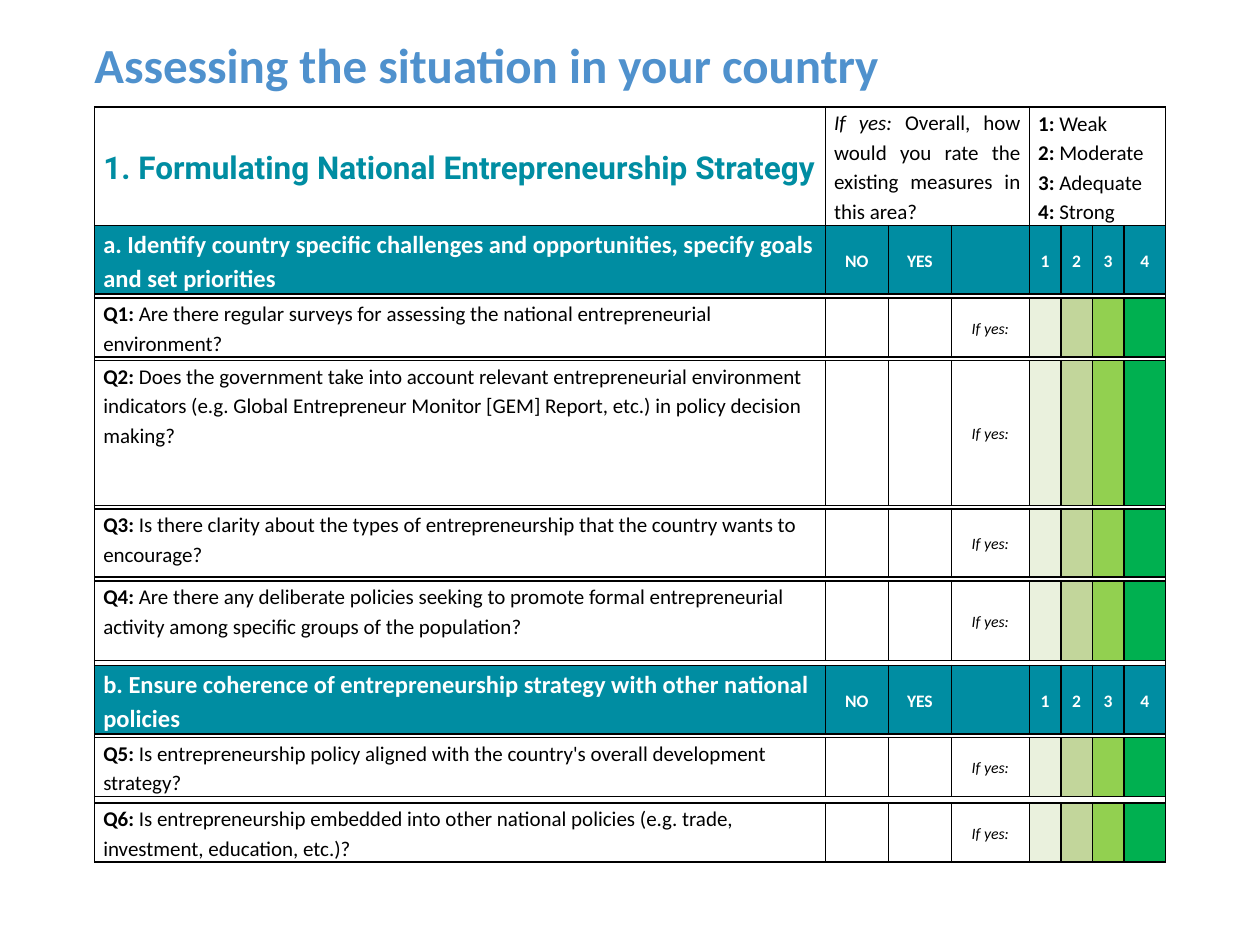
from dataclasses import dataclass

from lxml import etree
from pptx import Presentation
from pptx import util as u
from pptx.dml.color import RGBColor
from pptx.enum import text
from pptx.oxml.ns import qn

COLORS = {
    "title": "4F91CD", "teal": "008DA2", "black": "000000", "white": "FFFFFF",
    "weak": "EAF1DD", "moderate": "C2D69B", "adequate": "92D050", "strong": "00B050",
}
RATINGS = ("weak", "moderate", "adequate", "strong")
WIDTHS = (5.8, 0.5, 0.5, 0.62, 0.25, 0.25, 0.25, 0.33)
HEADER_HEIGHT = 0.94
LEFT, CENTER, JUSTIFY = text.PP_ALIGN.LEFT, text.PP_ALIGN.CENTER, text.PP_ALIGN.JUSTIFY
TOP, MIDDLE = text.MSO_ANCHOR.TOP, text.MSO_ANCHOR.MIDDLE


@dataclass(frozen=True)
class Span:
    words: str
    size: float = 12
    color: str = "black"
    bold: bool = False
    italic: bool = False
    font: str = "Calibri"


@dataclass(frozen=True)
class Entry:
    label: str
    words: str
    height: float
    gap: float = 0.03

    @property
    def is_heading(self) -> bool:
        return not self.label.startswith("Q")


ENTRIES = (
    Entry("a.", "Identify country specific challenges and opportunities, specify goals and set priorities", 0.54),
    Entry("Q1:", "Are there regular surveys for assessing the national entrepreneurial environment?", 0.46),
    Entry("Q2:", "Does the government take into account relevant entrepreneurial environment indicators "
          "(e.g. Global Entrepreneur Monitor [GEM] Report, etc.) in policy decision making?", 1.15),
    Entry("Q3:", "Is there clarity about the types of entrepreneurship that the country wants to encourage?", 0.54),
    Entry("Q4:", "Are there any deliberate policies seeking to promote formal entrepreneurial activity "
          "among specific groups of the population?", 0.63, 0.04),
    Entry("b.", "Ensure coherence of entrepreneurship strategy with other national policies", 0.54),
    Entry("Q5:", "Is entrepreneurship policy aligned with the country's overall development strategy?", 0.46, 0.05),
    Entry("Q6:", "Is entrepreneurship embedded into other national policies "
          "(e.g. trade, investment, education, etc.)?", 0.46, 0),
)


def add_span(para, span: Span) -> None:
    """Add one formatted run to a paragraph."""
    run = para.add_run()
    run.text = span.words
    values = {"size": u.Pt(span.size), "bold": span.bold, "italic": span.italic, "name": span.font}
    for name, value in values.items():
        setattr(run.font, name, value)
    run.font.color.rgb = RGBColor.from_string(COLORS[span.color])


def style_cell(cell, fill: str = "white") -> None:
    """Give a cell its borders, fill and margins, and keep its empty line small."""
    properties = cell._tc.get_or_add_tcPr()
    for side in ("a:lnL", "a:lnR", "a:lnT", "a:lnB"):
        line = etree.SubElement(properties, qn(side), w=str(u.Pt(1)))
        solid = etree.SubElement(line, qn("a:solidFill"))
        etree.SubElement(solid, qn("a:srgbClr"), val=COLORS["black"])
    cell.fill.solid()
    cell.fill.fore_color.rgb = RGBColor.from_string(COLORS[fill])
    margins = {"margin_left": 0.07, "margin_right": 0.07, "margin_top": 0, "margin_bottom": 0}
    for name, value in margins.items():
        setattr(cell, name, u.Inches(value))
    etree.SubElement(cell.text_frame.paragraphs[0]._p, qn("a:endParaRPr"), sz="100")


def write_cell(cell, lines: list[list[Span]], align=LEFT, anchor=MIDDLE) -> None:
    """Write paragraphs of spans into a cell."""
    cell.vertical_anchor = anchor
    frame = cell.text_frame
    for index, spans in enumerate(lines):
        para = frame.add_paragraph() if index else frame.paragraphs[0]
        para.alignment = align
        para.line_spacing = 1.15
        for span in spans:
            add_span(para, span)


def fill_header(grid) -> None:
    """Fill the top row with the topic, the question and the rating key."""
    for column in range(len(WIDTHS)):
        style_cell(grid.cell(0, column))
    grid.cell(0, 1).merge(grid.cell(0, 3))
    grid.cell(0, 4).merge(grid.cell(0, 7))
    topic = Span("1. Formulating National Entrepreneurship Strategy", 18, "teal", True, font="Roboto")
    write_cell(grid.cell(0, 0), [[topic]])
    question = [Span("If yes:", italic=True),
                Span(" Overall, how would you rate the existing measures in this area?")]
    write_cell(grid.cell(0, 1), [question], JUSTIFY, TOP)
    key = [[Span(f"{number}:", bold=True), Span(f" {rating.title()}")]
           for number, rating in enumerate(RATINGS, 1)]
    write_cell(grid.cell(0, 4), key)


def fill_heading(cells: list, entry: Entry) -> None:
    """Fill a teal section row."""
    for cell in cells:
        style_cell(cell, "teal")
    write_cell(cells[0], [[Span(f"{entry.label} {entry.words}", 14, "white", True)]], anchor=TOP)
    for cell, label in zip(cells[1:], ("NO", "YES", "", "1", "2", "3", "4")):
        if label:
            write_cell(cell, [[Span(label, 10, "white", True)]], CENTER)


def fill_question(cells: list, entry: Entry) -> None:
    """Fill a question row with its rating colours."""
    for cell, fill in zip(cells, ("white",) * 4 + RATINGS):
        style_cell(cell, fill)
    write_cell(cells[0], [[Span(entry.label, bold=True), Span(f" {entry.words}")]], anchor=TOP)
    write_cell(cells[3], [[Span("If yes:", 9, italic=True)]], CENTER)


def add_assessment(page) -> None:
    """Add the assessment table."""
    heights = [HEADER_HEIGHT]
    for entry in ENTRIES:
        heights += [entry.height, entry.gap] if entry.gap else [entry.height]
    grid = page.shapes.add_table(
        len(heights), len(WIDTHS), u.Inches(0.75), u.Inches(0.85),
        u.Inches(sum(WIDTHS)), u.Inches(sum(heights))).table
    grid.first_row = grid.horz_banding = False
    for column, width in zip(grid.columns, WIDTHS):
        column.width = u.Inches(width)
    for row, height in zip(grid.rows, heights):
        row.height = u.Inches(height)
    fill_header(grid)
    for index, entry in enumerate(ENTRIES):
        row = 1 + 2 * index
        fill_row = fill_heading if entry.is_heading else fill_question
        fill_row(list(grid.rows[row].cells), entry)
        if entry.gap:
            for cell in grid.rows[row + 1].cells:
                style_cell(cell)
            grid.cell(row + 1, 0).merge(grid.cell(row + 1, len(WIDTHS) - 1))


def add_title(page) -> None:
    """Add the slide title."""
    box = page.shapes.add_textbox(u.Inches(0.75), u.Inches(-0.08), u.Inches(9), u.Inches(1.17))
    frame = box.text_frame
    values = {"word_wrap": True, "vertical_anchor": MIDDLE, "margin_left": 0,
              "margin_right": 0, "margin_top": 0, "margin_bottom": 0}
    for name, value in values.items():
        setattr(frame, name, value)
    add_span(frame.paragraphs[0], Span("Assessing the situation in your country", 28, "title", True))


def main() -> None:
    """Build and save the deck."""
    deck = Presentation()
    deck.slide_width, deck.slide_height = u.Inches(10), u.Inches(7.5)
    page = deck.slides.add_slide(deck.slide_layouts[6])
    add_assessment(page)
    add_title(page)
    deck.save("out.pptx")


if __name__ == "__main__":
    main()
